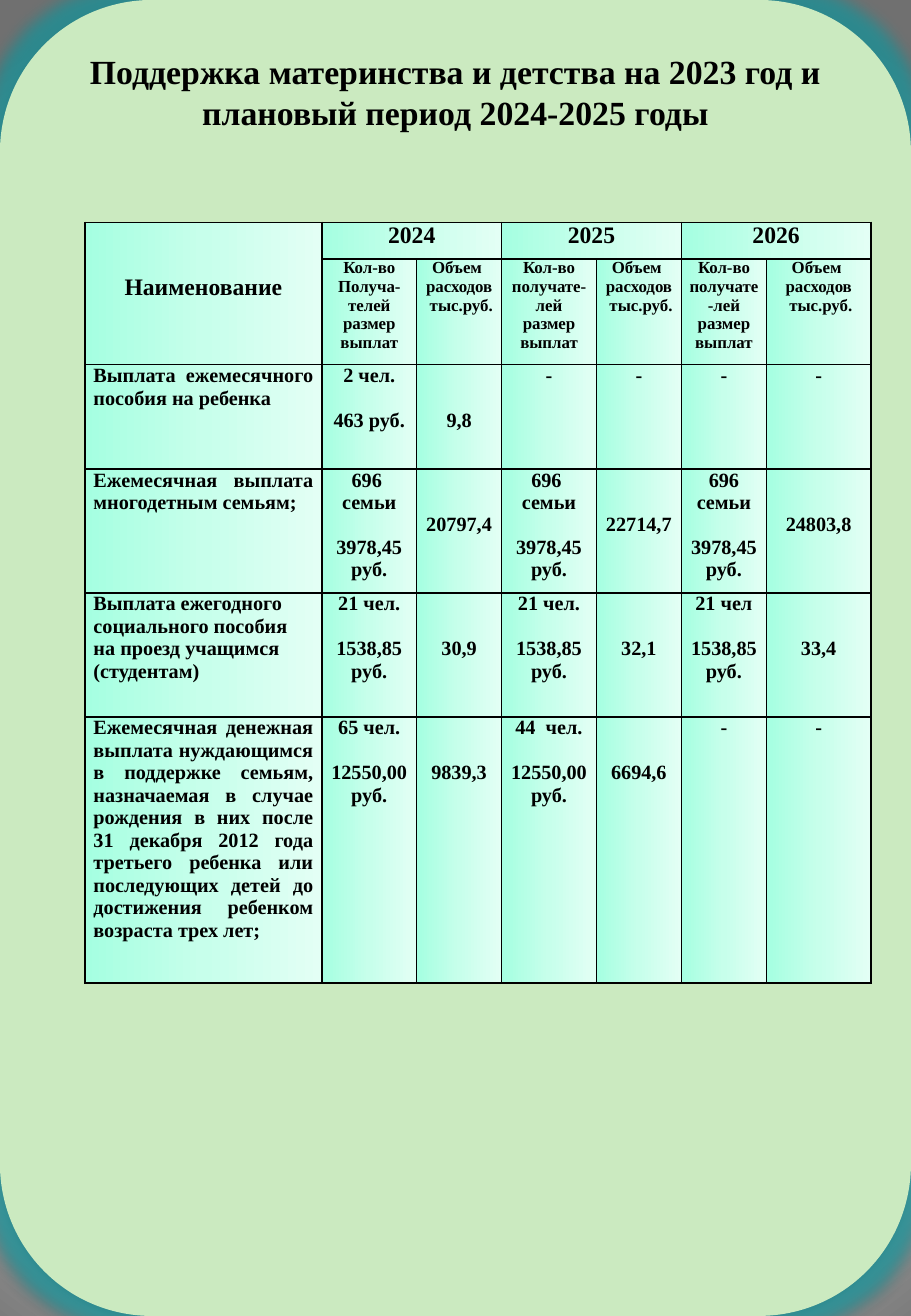
from lxml import etree
from pptx import Presentation
from pptx.dml.color import RGBColor
from pptx.enum.shapes import MSO_SHAPE
from pptx.enum.text import MSO_ANCHOR, MSO_AUTO_SIZE, PP_ALIGN as ALIGN
from pptx.oxml.ns import nsdecls, qn
from pptx.util import Inches, Pt

FONT = "Times New Roman"
BLACK = "000000"
YEARS = ["2024", "2025", "2026"]
COL_WIDTHS = [1.95, 0.78, 0.7, 0.78, 0.7, 0.7, 0.86]
ROW_HEIGHTS = [0.3, 0.87, 0.86, 1.02, 1.02, 2.19]
CELL_STOPS = [(0, "A5FFE1"), (50, "C7FFEB"), (100, "E3FFF5")]
PAGE_STOPS = [(0, "FFFFFF"), (25, "FFFFFF"), (100, "707070")]

RECIPIENTS = "Кол-во\n{}\nразмер\nвыплат"
EXPENSES = "Объем \nрасходов\n тыс.руб."
RECIPIENT_WORDS = ["Получа-телей", "получате-лей", "получате-лей"]

PAYMENTS = [
    ("Выплата ежемесячного пособия на ребенка ", ALIGN.JUSTIFY,
     ["2 чел.\n463 руб.", "9,8", "-", "-", "-", "-"]),
    ("Ежемесячная выплата многодетным семьям;", ALIGN.JUSTIFY,
     ["696  семьи\n3978,45 руб.", "20797,4",
      "696 \nсемьи\n3978,45 руб.", "22714,7",
      "696 семьи\n3978,45 руб.", "24803,8"]),
    ("Выплата ежегодного социального пособия на проезд учащимся (студентам)",
     ALIGN.LEFT,
     ["21 чел.\n1538,85 руб.", "30,9", "21 чел.\n1538,85 руб.", "32,1",
      "21 чел\n1538,85 руб.", "33,4"]),
    ("Ежемесячная денежная выплата нуждающимся в поддержке семьям, "
     "назначаемая в случае рождения в них после 31 декабря 2012 года "
     "третьего ребенка или последующих детей до достижения ребенком "
     "возраста трех лет;", ALIGN.JUSTIFY,
     ["65 чел.\n12550,00 руб.", "9839,3",
      "44  чел.\n12550,00 руб.", "6694,6", "-", "-"]),
]


def rgb(color):
    return RGBColor.from_string(color)


def xml(text):
    return etree.fromstring(text.replace(">", f" {nsdecls('a')}>", 1))


def gradient(stops, direction):
    gs = "".join(f'<a:gs pos="{pos * 1000}"><a:srgbClr val="{color}"/></a:gs>'
                 for pos, color in stops)
    return xml(f'<a:gradFill rotWithShape="1"><a:gsLst>{gs}</a:gsLst>'
               f'{direction}</a:gradFill>')


def write(tf, text, size, align=ALIGN.CENTER, gap=0):
    lines = text.split("\n")
    for i, line in enumerate(lines):
        p = tf.paragraphs[0] if i == 0 else tf.add_paragraph()
        p.alignment = align
        if gap and 0 < i == len(lines) - 1:
            p.space_before = Pt(gap)
        r = p.add_run()
        r.text = line
        r.font.name = FONT
        r.font.size = Pt(size)
        r.font.bold = True
        r.font.color.rgb = rgb(BLACK)


def style_cell(cell):
    tc_pr = cell._tc.get_or_add_tcPr()
    for side in "LRTB":
        tc_pr.append(xml(f'<a:ln{side} w="12700"><a:solidFill>'
                         f'<a:srgbClr val="{BLACK}"/></a:solidFill></a:ln{side}>'))
    tc_pr.append(gradient(CELL_STOPS, '<a:lin ang="0" scaled="1"/>'))


def fill_cell(cell, text, size, side=0.07, top=0, align=ALIGN.CENTER, gap=0):
    cell.margin_left = cell.margin_right = Inches(side)
    cell.margin_top, cell.margin_bottom = Inches(top), 0
    write(cell.text_frame, text, size, align, gap)


def add_background(slide):
    slide.background.fill.gradient()
    old = next(slide.element.iter(qn("a:gradFill")))
    circle = ('<a:path path="circle"><a:fillToRect l="10000" t="110000" '
              'r="10000" b="100000"/></a:path>')
    old.getparent().replace(old, gradient(PAGE_STOPS, circle))


def add_card(slide, width, height):
    sp = slide.shapes.add_shape(MSO_SHAPE.ROUNDED_RECTANGLE, 0, 0, width, height)
    sp.fill.solid()
    sp.fill.fore_color.rgb = rgb("CBEAC0")
    sp.line.fill.background()
    sp.element.spPr.append(xml(
        '<a:effectLst><a:glow rad="228600"><a:srgbClr val="0FA8B0">'
        '<a:alpha val="60000"/></a:srgbClr></a:glow>'
        '<a:outerShdw blurRad="44450" dist="27940" dir="5400000">'
        f'<a:srgbClr val="{BLACK}"><a:alpha val="32000"/></a:srgbClr>'
        '</a:outerShdw></a:effectLst>'))
    slide.shapes.title.element.addprevious(sp.element)


def add_title(slide):
    sp = slide.shapes.title
    sp.left, sp.top = Inches(0.42), Inches(0.37)
    sp.width, sp.height = Inches(6.66), Inches(0.8)
    tf = sp.text_frame
    tf.word_wrap = True
    tf.auto_size = MSO_AUTO_SIZE.NONE
    tf.vertical_anchor = MSO_ANCHOR.TOP
    write(tf, "Поддержка материнства и детства на 2023 год и "
              "плановый период 2024-2025 годы", 20)


def add_payments_table(slide):
    frame = slide.shapes.add_table(
        len(ROW_HEIGHTS), len(COL_WIDTHS), Inches(0.7), Inches(1.83),
        Inches(sum(COL_WIDTHS)), Inches(sum(ROW_HEIGHTS)))
    table = frame.table
    table.first_row = table.horz_banding = False
    for column, width in zip(table.columns, COL_WIDTHS):
        column.width = Inches(width)
    for row, height in zip(table.rows, ROW_HEIGHTS):
        row.height = Inches(height)
    for cell in table.iter_cells():
        style_cell(cell)

    table.cell(0, 0).merge(table.cell(1, 0))
    fill_cell(table.cell(0, 0), "Наименование", 14, side=0.05, top=0.43)
    for i, (year, word) in enumerate(zip(YEARS, RECIPIENT_WORDS)):
        col = 1 + 2 * i
        table.cell(0, col).merge(table.cell(0, col + 1))
        fill_cell(table.cell(0, col), year, 14, side=0.05)
        fill_cell(table.cell(1, col), RECIPIENTS.format(word), 10, side=0.05)
        fill_cell(table.cell(1, col + 1), EXPENSES, 10, side=0.05)

    for row, (name, align, values) in enumerate(PAYMENTS, 2):
        fill_cell(table.cell(row, 0), name, 12, align=align)
        for col, value in enumerate(values, 1):
            is_amount = col % 2 == 0 and value != "-"
            fill_cell(table.cell(row, col), value, 12,
                      top=0.37 if is_amount else 0, gap=13.3)


def main():
    prs = Presentation()
    prs.slide_width, prs.slide_height = Inches(7.5), Inches(10.83)
    slide = prs.slides.add_slide(prs.slide_layouts[5])
    add_background(slide)
    add_card(slide, prs.slide_width, prs.slide_height)
    add_title(slide)
    add_payments_table(slide)
    prs.save("out.pptx")


if __name__ == "__main__":
    main()
